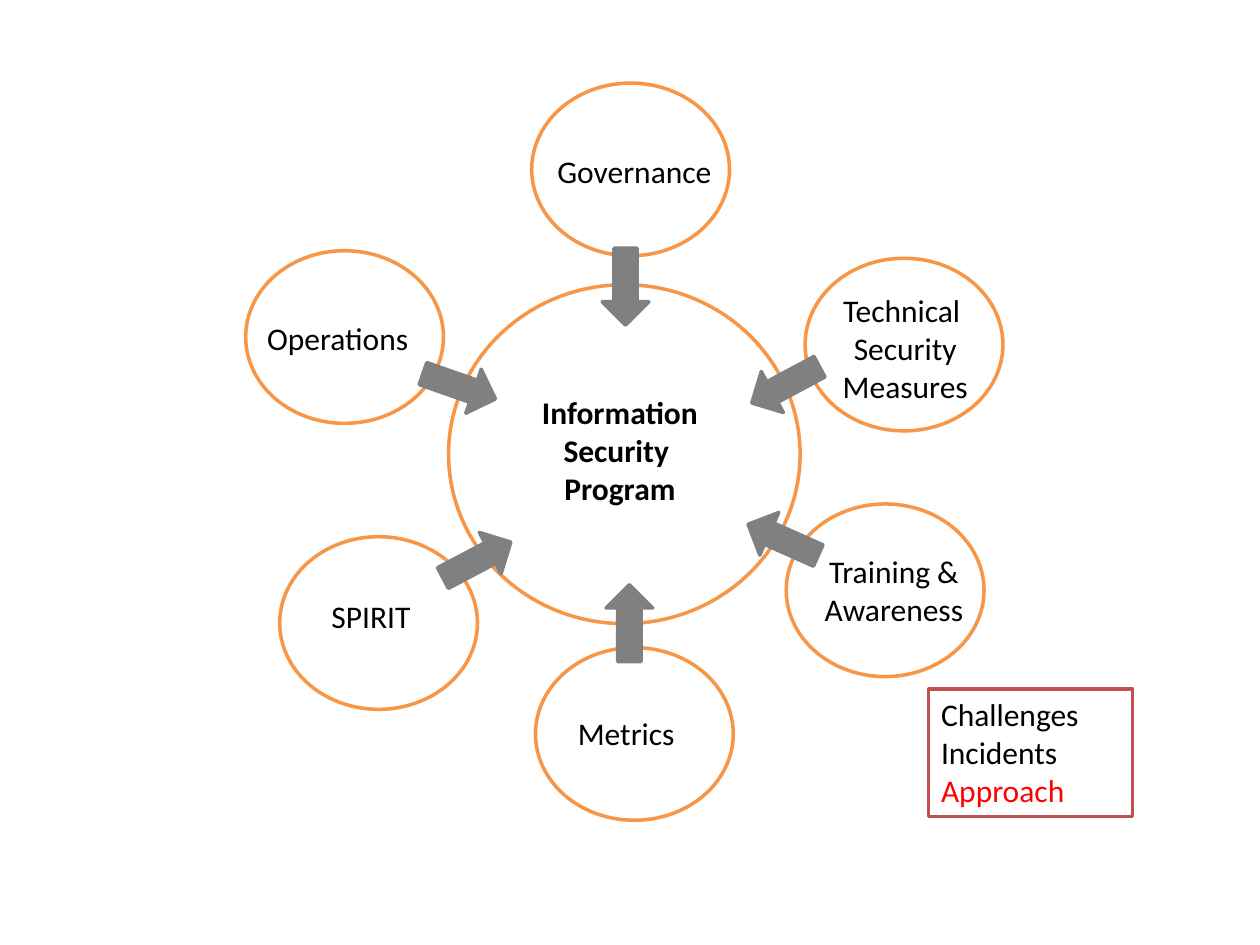
from dataclasses import dataclass

from pptx import Presentation
from pptx import util as u
from pptx.dml.color import RGBColor
from pptx.enum import shapes, text

WHITE, BLACK, RED = "FFFFFF", "000000", "FF0000"
ORANGE, GRAY, BRICK = "F79646", "808080", "C0504D"
TOPIC_SIZE = (1.57, 1.37)
ARROW_SIZE = (0.37, 0.61)


@dataclass
class Label:
    words: str
    left: float
    top: float
    width: float
    height: float
    wrap: bool = True
    bold: bool = False


@dataclass
class Topic:
    """A circle around the hub, its label and the arrow leading inwards."""
    circle: tuple[float, float]
    arrow: tuple[float, float]
    rotation: float
    label: Label


HUB = Label("Information Security \vProgram", 3.97, 3.07, 1.9, 1.01, bold=True)
TOPICS = [
    Topic((4.22, 0.66), (4.78, 1.97), 0,
          Label("Governance", 4.02, 1.16, 2.03, 0.4)),
    Topic((4.25, 5.14), (4.81, 4.64), 180,
          Label("Metrics", 4.48, 5.62, 0.98, 0.4, wrap=False)),
    Topic((6.39, 2.05), (6.05, 2.75), 61.8,
          Label("Technical \vSecurity Measures", 6.17, 2.26, 2.03, 1.01)),
    Topic((6.24, 4), (6.03, 3.98), 114,
          Label("Training & Awareness", 6.08, 4.33, 2.03, 0.71)),
    Topic((1.95, 1.99), (3.46, 2.76), 289.3,
          Label("Operations", 2.01, 2.48, 1.34, 0.4, wrap=False)),
    Topic((2.22, 4.26), (3.6, 4.14), 242.1,
          Label("SPIRIT", 2.53, 4.69, 0.83, 0.4, wrap=False)),
]
LEGEND = [("Challenges", BLACK), ("Incidents", BLACK), ("Approach", RED)]


def color(value: str) -> RGBColor:
    return RGBColor.from_string(value)


def add_outline(page, kind, place: tuple[float, float], size: tuple[float, float],
                fill: str, line: str):
    shape = page.shapes.add_shape(kind, *map(u.Inches, place + size))
    shape.shadow.inherit = False
    shape.fill.solid()
    shape.fill.fore_color.rgb = color(fill)
    shape.line.color.rgb = color(line)
    shape.line.width = u.Pt(2)
    return shape


def format_paragraph(para, align, ink: str = BLACK, bold: bool = False) -> None:
    para.alignment = align
    for span in para.runs:
        span.font.name = "Calibri"
        span.font.size = u.Pt(18)
        span.font.bold = bold
        span.font.color.rgb = color(ink)


def add_label(page, label: Label) -> None:
    box = page.shapes.add_textbox(u.Inches(label.left), u.Inches(label.top),
                                  u.Inches(label.width), u.Inches(label.height))
    frame = box.text_frame
    frame.word_wrap = label.wrap
    frame.auto_size = text.MSO_AUTO_SIZE.SHAPE_TO_FIT_TEXT
    frame.text = label.words
    format_paragraph(frame.paragraphs[0], text.PP_ALIGN.CENTER, bold=label.bold)


def add_legend(page) -> None:
    box = add_outline(page, shapes.MSO_SHAPE.RECTANGLE, (7.37, 5.47), (1.62, 1.01),
                      WHITE, BRICK)
    frame = box.text_frame
    frame.word_wrap = True
    frame.auto_size = text.MSO_AUTO_SIZE.SHAPE_TO_FIT_TEXT
    frame.vertical_anchor = text.MSO_ANCHOR.TOP
    frame.text = "\n".join(words for words, _ in LEGEND)
    for para, (_, ink) in zip(frame.paragraphs, LEGEND):
        format_paragraph(para, text.PP_ALIGN.LEFT, ink)


def main() -> None:
    deck = Presentation()
    deck.slide_width, deck.slide_height = u.Inches(10), u.Inches(7.5)
    page = deck.slides.add_slide(deck.slide_layouts.get_by_name("Blank"))

    oval = shapes.MSO_SHAPE.OVAL
    add_outline(page, oval, (3.56, 2.26), (2.79, 2.69), WHITE, ORANGE)
    for topic in TOPICS:
        add_outline(page, oval, topic.circle, TOPIC_SIZE, WHITE, ORANGE)
    for topic in TOPICS:
        arrow = add_outline(page, shapes.MSO_SHAPE.DOWN_ARROW, topic.arrow,
                            ARROW_SIZE, GRAY, GRAY)
        arrow.rotation = topic.rotation
    add_legend(page)
    for label in [HUB] + [topic.label for topic in TOPICS]:
        add_label(page, label)

    deck.save("out.pptx")


if __name__ == "__main__":
    main()
